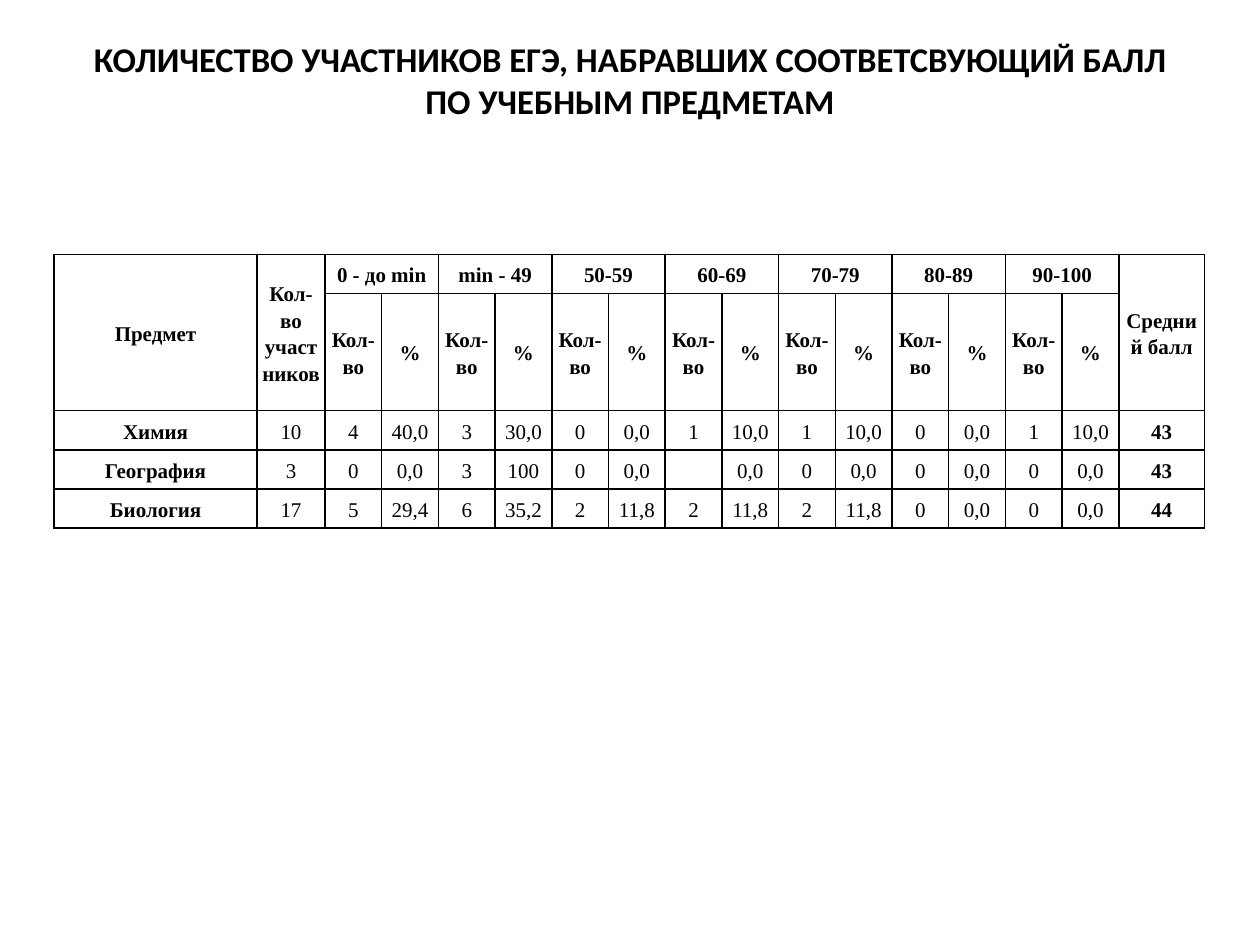
import pptx
import pptx.dml.color
import pptx.enum.text
import pptx.oxml.ns
import pptx.util
from lxml import etree

Inches = pptx.util.Inches
Pt = pptx.util.Pt


def colour(hex_code):
    return pptx.dml.color.RGBColor.from_string(hex_code)


class ScoreSlide:
    ink = "000000"
    paper = "FFFFFF"
    title_font = "Calibri"
    table_font = "Times New Roman"
    table_size = 12
    border_width = 1

    def __init__(self, deck):
        self.slide = deck.slides.add_slide(deck.slide_layouts[6])

    def style(self, paragraph, font_name, size, bold):
        paragraph.alignment = pptx.enum.text.PP_ALIGN.CENTER
        for run in paragraph.runs:
            run.font.name = font_name
            run.font.size = Pt(size)
            run.font.bold = bold
            run.font.color.rgb = colour(self.ink)

    def title(self, text, left, top, width, height):
        heading = self.slide.shapes.add_textbox(
            Inches(left), Inches(top), Inches(width), Inches(height))
        frame = heading.text_frame
        frame.word_wrap = True
        frame.margin_top = 0
        frame.vertical_anchor = pptx.enum.text.MSO_ANCHOR.TOP
        frame.text = text
        self.style(frame.paragraphs[0], self.title_font, 19.8, True)

    def borders(self, cell):
        properties = cell._tc.get_or_add_tcPr()
        for side in ("a:lnL", "a:lnR", "a:lnT", "a:lnB"):
            line = etree.SubElement(properties, pptx.oxml.ns.qn(side), w=str(Pt(self.border_width)))
            fill = etree.SubElement(line, pptx.oxml.ns.qn("a:solidFill"))
            etree.SubElement(fill, pptx.oxml.ns.qn("a:srgbClr"), val=self.ink)

    def cell(self, cell, text, bold):
        self.borders(cell)
        cell.fill.solid()
        cell.fill.fore_color.rgb = colour(self.paper)
        cell.margin_left = cell.margin_right = Inches(0.04)
        cell.margin_top = cell.margin_bottom = 0
        cell.vertical_anchor = pptx.enum.text.MSO_ANCHOR.MIDDLE
        cell.text_frame.text = text
        paragraph = cell.text_frame.paragraphs[0]
        paragraph.line_spacing = 1.15
        self.style(paragraph, self.table_font, self.table_size, bold)
        if not text:
            paragraph._p.get_or_add_endParaRPr().set("sz", str(self.table_size * 100))

    def table(self, rows, left, top, widths, heights, header_rows, merges):
        table = self.slide.shapes.add_table(
            len(rows), len(widths), Inches(left), Inches(top),
            Inches(sum(widths)), Inches(sum(heights))).table
        for column, width in zip(table.columns, widths):
            column.width = Inches(width)
        for row, height in zip(table.rows, heights):
            row.height = Inches(height)
        last = len(widths) - 1
        for r, values in enumerate(rows):
            for c, value in enumerate(values):
                self.cell(table.cell(r, c), value, r < header_rows or c in (0, last))
        for start, end in merges:
            table.cell(*start).merge(table.cell(*end))


def main():
    deck = pptx.Presentation()
    deck.slide_width = Inches(10)
    deck.slide_height = Inches(7.5)
    scores = ScoreSlide(deck)
    scores.title(
        "КОЛИЧЕСТВО УЧАСТНИКОВ ЕГЭ, НАБРАВШИХ СООТВЕТСВУЮЩИЙ БАЛЛ ПО УЧЕБНЫМ ПРЕДМЕТАМ",
        0.5, 0.3, 9, 1.25)

    ranges = ["0 - до min", "min - 49", "50-59", "60-69", "70-79", "80-89", "90-100"]
    range_headers = [text for score_range in ranges for text in (score_range, "")]
    subjects = [
        "Химия|10|4|40,0|3|30,0|0|0,0|1|10,0|1|10,0|0|0,0|1|10,0|43",
        "География|3|0|0,0|3|100|0|0,0||0,0|0|0,0|0|0,0|0|0,0|43",
        "Биология|17|5|29,4|6|35,2|2|11,8|2|11,8|2|11,8|0|0,0|0|0,0|44",
    ]
    rows = [
        ["Предмет", "Кол-во участников", *range_headers, "Средний балл"],
        ["", "", *["Кол-во", "%"] * len(ranges), ""],
        *[subject.split("|") for subject in subjects],
    ]
    widths = [1.61, 0.54] + [0.45] * len(range_headers) + [0.68]
    heights = [0.31, 0.93] + [0.31] * len(subjects)
    average = len(widths) - 1
    merges = [((0, c), (1, c)) for c in (0, 1, average)]
    merges += [((0, c), (0, c + 1)) for c in range(2, average, 2)]
    scores.table(rows, 0.43, 2.02, widths, heights, 2, merges)
    deck.save("out.pptx")


if __name__ == "__main__":
    main()
